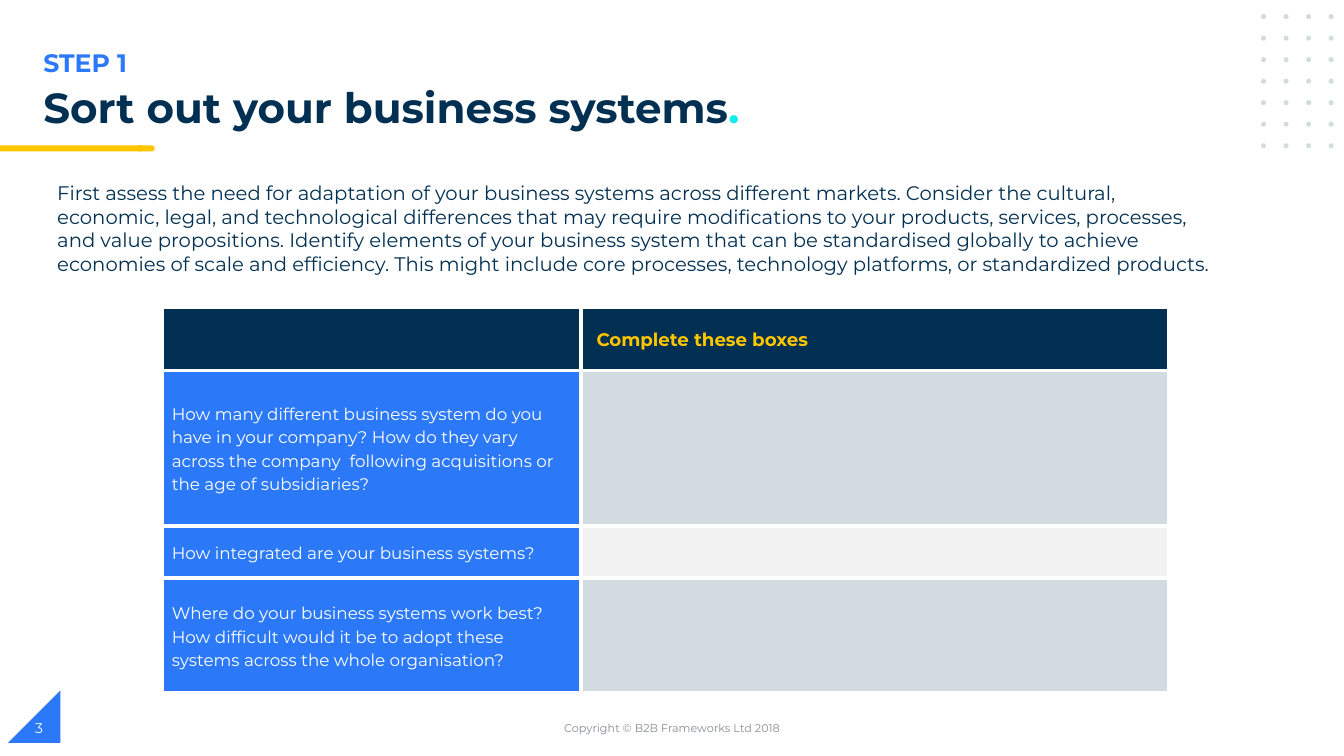
from lxml import etree
from pptx import Presentation
from pptx.dml.color import RGBColor
from pptx.enum.shapes import MSO_SHAPE
from pptx.enum.text import MSO_ANCHOR, MSO_AUTO_SIZE, PP_ALIGN
from pptx.oxml.ns import qn
from pptx.util import Pt

NAVY = RGBColor(0x02, 0x30, 0x53)
BLUE = RGBColor(0x2B, 0x79, 0xF8)
YELLOW = RGBColor(0xFF, 0xC6, 0x00)
CYAN = RGBColor(0x0E, 0xEC, 0xEC)
DOT_GREY = RGBColor(0xD1, 0xDB, 0xE0)
PALE_GREY = RGBColor(0xF2, 0xF2, 0xF2)
FOOTER_GREY = RGBColor(0x88, 0x8C, 0x97)
WHITE = RGBColor(0xFF, 0xFF, 0xFF)

FONT = "Montserrat"
TOP, MIDDLE = MSO_ANCHOR.TOP, MSO_ANCHOR.MIDDLE
LEFT, CENTER = PP_ALIGN.LEFT, PP_ALIGN.CENTER
OVAL, RECTANGLE = MSO_SHAPE.OVAL, MSO_SHAPE.RECTANGLE
TERMINATOR, TRIANGLE = MSO_SHAPE.FLOWCHART_TERMINATOR, MSO_SHAPE.RIGHT_TRIANGLE
NO_AUTOSIZE = MSO_AUTO_SIZE.NONE

INTRO = (
    "First assess the need for adaptation of your business systems across "
    "different markets. Consider the cultural, economic, legal, and "
    "technological differences that may require modifications to your products, "
    "services, processes, and value propositions. Identify elements of your "
    "business system that can be standardised globally to achieve economies of "
    "scale and efficiency. This might include core processes, technology "
    "platforms, or standardized products."
)
# Question, row height, colour of the answer box
QUESTIONS = [
    ("How many different business system do you have in your company? How do "
     "they vary across the company  following acquisitions or the age of "
     "subsidiaries?", 110.9, DOT_GREY),
    ("How integrated are your business systems?", 37.4, PALE_GREY),
    ("Where do your business systems work best? How difficult would it be to "
     "adopt these systems across the whole organisation?", 82.1, DOT_GREY),
]
HEADER_HEIGHT = 45.4
COLUMN_WIDTHS = (299.5, 419.8)


def add_run(paragraph, text, size, color, bold=False):
    run = paragraph.add_run()
    run.text = text
    run.font.name = FONT
    run.font.size = Pt(size)
    run.font.bold = bold
    run.font.color.rgb = color


def add_shape(slide, preset, left, top, width, height, color):
    shape = slide.shapes.add_shape(preset, Pt(left), Pt(top), Pt(width), Pt(height))
    shape.shadow.inherit = False
    shape.fill.solid()
    shape.fill.fore_color.rgb = color
    shape.line.fill.background()
    return shape


def add_text(slide, text, box, size, color, bold=False, align=LEFT, anchor=TOP):
    frame = slide.shapes.add_textbox(*map(Pt, box)).text_frame
    frame.word_wrap = True
    frame.vertical_anchor = anchor
    paragraph = frame.paragraphs[0]
    paragraph.alignment = align
    add_run(paragraph, text, size, color, bold)


def add_title(slide):
    title = slide.shapes.title
    title.left, title.top, title.width, title.height = map(Pt, (23.8, 59, 558.7, 28.8))
    frame = title.text_frame
    frame.auto_size = NO_AUTOSIZE
    frame.vertical_anchor = TOP
    paragraph = frame.paragraphs[0]
    paragraph.alignment = LEFT
    paragraph.line_spacing = 0.9
    add_run(paragraph, "Sort out your business systems", 30, NAVY, True)
    add_run(paragraph, ".", 30, CYAN, True)


def add_dot_grid(slide):
    for row in range(7):
        for column in range(4):
            add_shape(slide, OVAL, 900.7 + column * 16.1, 10.1 + row * 15.37,
                      3.6, 3.6, DOT_GREY)


def format_cell(cell, color):
    cell.fill.solid()
    cell.fill.fore_color.rgb = color
    cell.vertical_anchor = MIDDLE
    cell.margin_top = cell.margin_bottom = 0
    # White borders come before the fill in the cell properties
    properties = cell._tc.get_or_add_tcPr()
    for position, side in enumerate(("a:lnL", "a:lnR", "a:lnT", "a:lnB")):
        border = etree.Element(qn(side), w=str(Pt(3)))
        fill = etree.SubElement(border, qn("a:solidFill"))
        etree.SubElement(fill, qn("a:srgbClr"), val=str(WHITE))
        properties.insert(position, border)


def write_cell(cell, text, size, color, bold=False):
    paragraph = cell.text_frame.paragraphs[0]
    paragraph.line_spacing = 1.15
    add_run(paragraph, text, size, color, bold)


def add_question_table(slide):
    heights = [HEADER_HEIGHT] + [height for _, height, _ in QUESTIONS]
    table = slide.shapes.add_table(
        len(heights), len(COLUMN_WIDTHS), Pt(115.5), Pt(219.2),
        Pt(sum(COLUMN_WIDTHS)), Pt(sum(heights))).table
    for column, width in zip(table.columns, COLUMN_WIDTHS):
        column.width = Pt(width)
    for row, height in zip(table.rows, heights):
        row.height = Pt(height)

    # Header row
    for cell in table.rows[0].cells:
        format_cell(cell, NAVY)
    answer_header = table.cell(0, 1)
    answer_header.margin_left = Pt(11.1)
    write_cell(answer_header, "Complete these boxes", 13, YELLOW, True)

    # Questions with their empty answer boxes
    for number, (question, _, answer_color) in enumerate(QUESTIONS, start=1):
        format_cell(table.cell(number, 0), BLUE)
        write_cell(table.cell(number, 0), question, 12, WHITE)
        format_cell(table.cell(number, 1), answer_color)


def main():
    deck = Presentation()
    deck.slide_width, deck.slide_height = Pt(960), Pt(540)
    slide = deck.slides.add_slide(deck.slide_layouts[5])

    # Decoration
    page_corner = add_shape(slide, TRIANGLE, 5.8, 493.2, 37.4, 37.4, BLUE)
    page_corner._element.spPr.xfrm.set("flipH", "1")
    add_shape(slide, TERMINATOR, 96.8, 103.9, 13.7, 4.3, YELLOW)
    add_shape(slide, RECTANGLE, 0, 103.9, 101.5, 4.3, YELLOW)
    add_dot_grid(slide)

    # Heading and introduction
    add_text(slide, "STEP 1", (23.8, 30.2, 481.7, 28.8), 18, BLUE, bold=True)
    add_title(slide)
    add_text(slide, INTRO, (33.8, 126, 845.3, 74.9), 14, NAVY)

    add_question_table(slide)

    # Footer
    add_text(slide, "Copyright © B2B Frameworks Ltd 2018", (318.2, 505.4, 324, 28.8),
             8, FOOTER_GREY, align=CENTER, anchor=MIDDLE)
    add_text(slide, "3", (18, 505.4, 216, 28.8), 10, WHITE, anchor=MIDDLE)

    deck.save("out.pptx")


if __name__ == "__main__":
    main()
